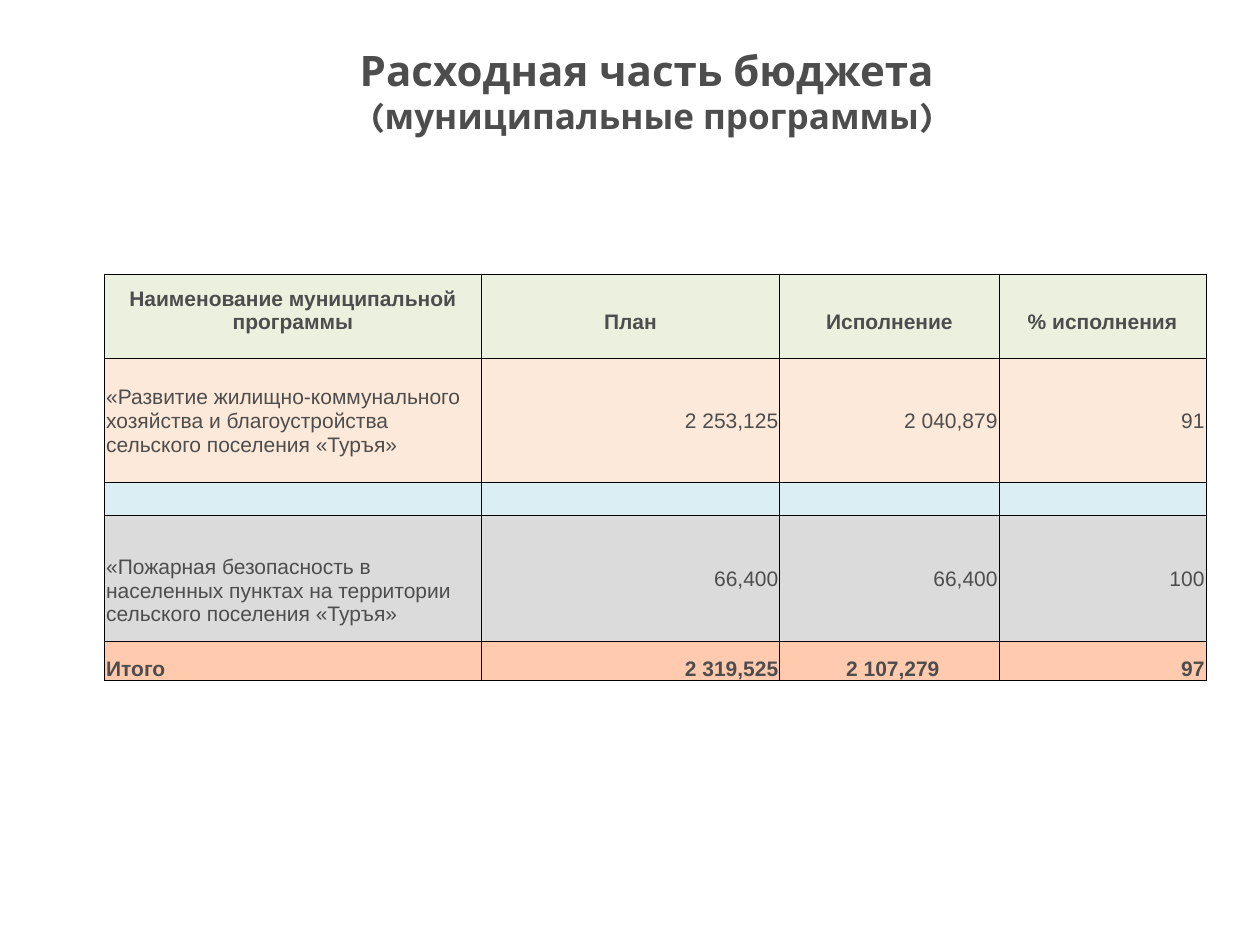
"""Build a slide with a table of budget spending by municipal programme."""
import pptx
import pptx.util
import pptx.dml.color
import pptx.enum.text
import pptx.oxml
import pptx.oxml.ns

Cm, Pt = pptx.util.Cm, pptx.util.Pt
ALIGN = pptx.enum.text.PP_ALIGN
ANCHOR = pptx.enum.text.MSO_ANCHOR
HUES = {
    "text": "4D4D4D", "line": "000000", "head": "EBF1DE", "peach": "FDE9D9",
    "blue": "DAEEF3", "grey": "DBDBDB", "total": "FFCAAD",
}
COLS = [7.59, 6.02, 4.42, 4.17]
ROWS = [
    ("head", 1.68, ["Наименование муниципальной программы", "План",
                    "Исполнение", "% исполнения"]),
    ("peach", 2.51, ["«Развитие жилищно-коммунального хозяйства и благоустройства "
                     "сельского поселения «Туръя»", "2 253,125", "2 040,879", "91"]),
    ("blue", 0.66, [""] * 4),
    ("grey", 2.54, ["«Пожарная безопасность в населенных пунктах на территории "
                    "сельского поселения «Туръя»", "66,400", "66,400", "100"]),
    ("total", 0.79, ["Итого", "2 319,525", "2 107,279", "97"]),
]


def color(name):
    return pptx.dml.color.RGBColor.from_string(HUES[name])


class Deck:
    """Hold the style and the current slide."""

    def __init__(self):
        self.show = pptx.Presentation()
        self.show.slide_width, self.show.slide_height = Cm(25.4), Cm(19.05)
        self.slide = self.show.slides.add_slide(self.show.slide_layouts[5])

    def style(self, para, face, bold, align):
        para.alignment = align
        font = para.font
        font.name, font.bold = face, bold
        font.color.rgb = color("text")
        return font

    def title(self, lines, left, top, width, height):
        box = self.slide.shapes.title
        box.left, box.top, box.width, box.height = map(Cm, (left, top, width, height))
        frame = box.text_frame
        frame.auto_size = pptx.enum.text.MSO_AUTO_SIZE.NONE
        frame.vertical_anchor = ANCHOR.MIDDLE
        para = frame.paragraphs[0]
        self.style(para, "Karla", True, ALIGN.CENTER)
        for num, (text, size) in enumerate(lines):
            if num:
                para.add_line_break()
            run = para.add_run()
            run.text, run.font.size = text, Pt(size)

    def edge(self, cell):
        props = cell._tc.get_or_add_tcPr()
        for num, side in enumerate("LRTB"):
            props.insert(num, pptx.oxml.parse_xml(
                f'<a:ln{side} {pptx.oxml.ns.nsdecls("a")} w="{Pt(0.5)}"><a:solidFill>'
                f'<a:srgbClr val="{HUES["line"]}"/></a:solidFill></a:ln{side}>'))

    def cell(self, cell, text, hue, align):
        bold = hue in ("head", "total")
        cell.fill.solid()
        cell.fill.fore_color.rgb = color(hue)
        cell.margin_left = cell.margin_right = cell.margin_top = Cm(0.03)
        cell.margin_bottom = Cm(0.48 if hue == "head" else 0)
        cell.vertical_anchor = ANCHOR.BOTTOM if bold else ANCHOR.MIDDLE
        para = cell.text_frame.paragraphs[0]
        self.style(para, "Arial", bold, align).size = Pt(12)
        if text:
            para.add_run().text = text
        else:
            para._p.get_or_add_endParaRPr().set("sz", "1200")
        self.edge(cell)

    def table(self, rows, cols, left, top):
        high = sum(row[1] for row in rows)
        grid = self.slide.shapes.add_table(
            len(rows), len(cols), Cm(left), Cm(top), Cm(sum(cols)), Cm(high)).table
        for col, width in zip(grid.columns, cols):
            col.width = Cm(width)
        for y, (hue, height, texts) in enumerate(rows):
            grid.rows[y].height = Cm(height)
            for x, text in enumerate(texts):
                side = ALIGN.RIGHT if x else ALIGN.LEFT
                self.cell(grid.cell(y, x), text, hue,
                          ALIGN.CENTER if hue == "head" else side)
        return grid


def main():
    deck = Deck()
    deck.title([("Расходная часть бюджета ", 24), ("(муниципальные программы)", 20)],
               3.3, 1.12, 19.69, 1.4)
    grid = deck.table(ROWS, COLS, 2.11, 5.54)
    grid.cell(3, 0).margin_top = Cm(0.5)
    grid.cell(4, 2).margin_right = Cm(1.2)
    deck.show.save("out.pptx")


if __name__ == "__main__":
    main()
